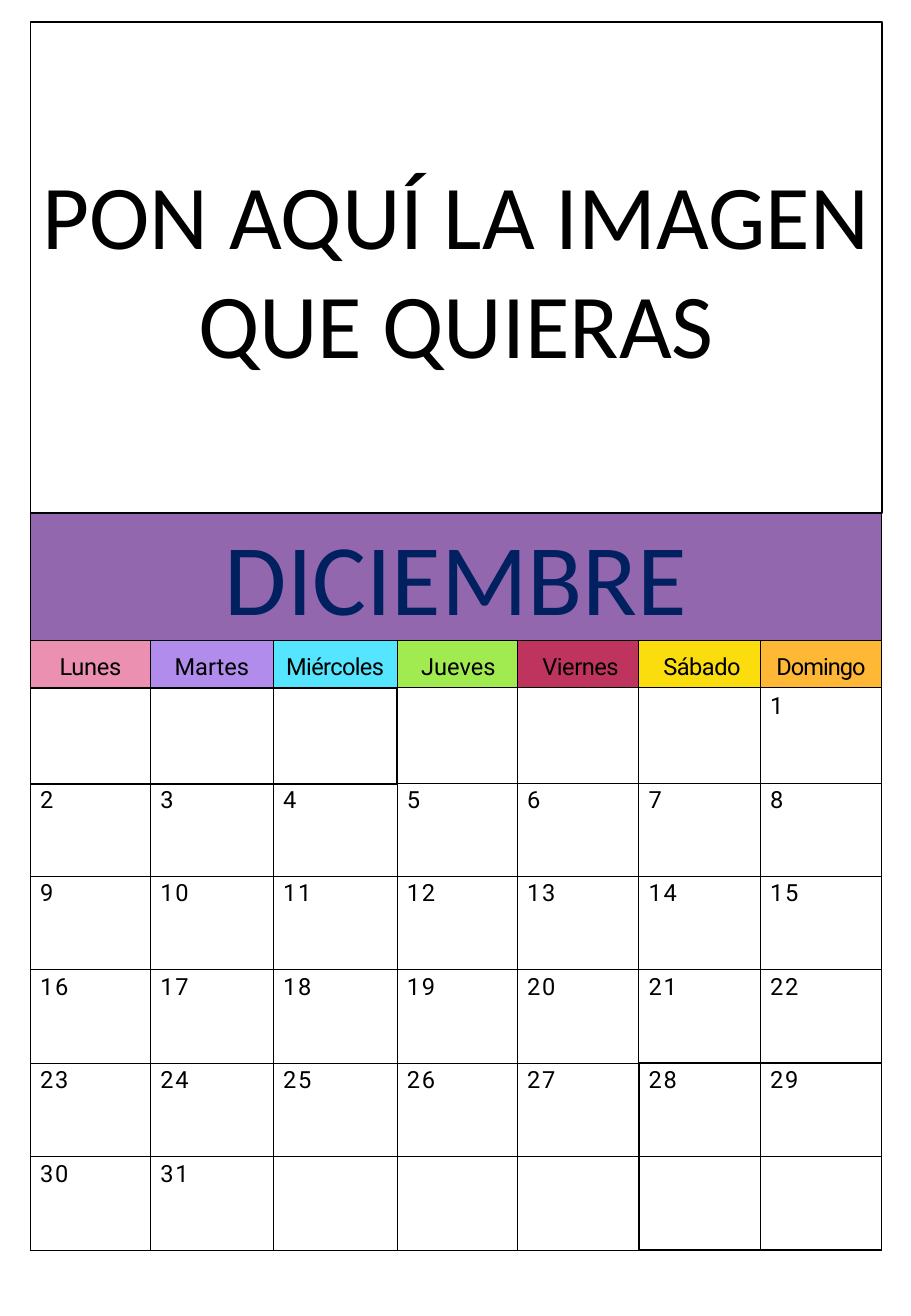
from dataclasses import dataclass

from lxml import etree
from pptx import Presentation
from pptx.dml.color import RGBColor
from pptx.enum.shapes import MSO_SHAPE
from pptx.enum.text import MSO_ANCHOR, PP_ALIGN
from pptx.oxml.ns import qn
from pptx.util import Pt

RECTANGLE = MSO_SHAPE.RECTANGLE
MIDDLE, TOP = MSO_ANCHOR.MIDDLE, MSO_ANCHOR.TOP
CENTER, LEFT = PP_ALIGN.CENTER, PP_ALIGN.LEFT

BLACK = RGBColor(0x00, 0x00, 0x00)
WHITE = RGBColor(0xFF, 0xFF, 0xFF)
NAVY = RGBColor(0x00, 0x20, 0x60)
PURPLE = RGBColor(0x93, 0x67, 0xAD)
PINK = RGBColor(0xEB, 0x90, 0xB0)
LILAC = RGBColor(0xB1, 0x8C, 0xEC)
CYAN = RGBColor(0x55, 0xE5, 0xFF)
GREEN = RGBColor(0xA1, 0xEB, 0x51)
CRIMSON = RGBColor(0xBE, 0x34, 0x5E)
YELLOW = RGBColor(0xFB, 0xDD, 0x0D)
ORANGE = RGBColor(0xFF, 0xB8, 0x36)

# Page layout in points
PAGE_WIDTH, PAGE_HEIGHT = 540, 779.76
PAGE_LEFT, CONTENT_WIDTH = 18, 504.7
PHOTO_TOP, PHOTO_HEIGHT = 13, 290.9
MONTH_TOP, MONTH_HEIGHT = 303.9, 75.6
CALENDAR_TOP = 379.5
WEEK_HEIGHTS = [56.9, 54.7, 55.4, 55.4, 55.4, 55.4]
WEEK_INSETS = [2.9, 1.4, 2.2, 2.2, 2.2, 2.2]
HEADER_HEIGHT = 28.1
THIN, THICK = 0.75, 1

# Calendar facts
FIRST_WEEKDAY, DAYS_IN_MONTH = 6, 31
THICK_CELLS = {(1, col) for col in range(3)} | {
    (row, col) for row in (5, 6) for col in (5, 6)
}
SIDES = {"lnL": (0, -1), "lnR": (0, 1), "lnT": (-1, 0), "lnB": (1, 0)}


@dataclass
class Weekday:
    name: str
    fill: RGBColor
    width: float
    tracking: float = 0
    indent: float = 0


WEEKDAYS = [
    Weekday("Lunes", PINK, 71.3, tracking=-0.2),
    Weekday("Martes", LILAC, 72.7),
    Weekday("Miércoles", CYAN, 73.4, tracking=-0.4),
    Weekday("Jueves", GREEN, 71.3, indent=1.4),
    Weekday("Viernes", CRIMSON, 72, tracking=-0.3, indent=2.9),
    Weekday("Sábado", YELLOW, 72, tracking=-0.3, indent=2.9),
    Weekday("Domingo", ORANGE, 72, tracking=-0.6),
]


def write_text(frame, text: str, *, size: float, font: str = "Roboto",
               color: RGBColor = BLACK, align=CENTER, before: float = 0,
               indent: float = 0, tracking: float = 0) -> None:
    paragraph = frame.paragraphs[0]
    paragraph.alignment = align
    paragraph.space_before = Pt(before)
    if indent:
        paragraph._p.get_or_add_pPr().set("marL", str(Pt(indent)))
    run = paragraph.add_run()
    run.text = text
    run.font.size = Pt(size)
    run.font.name = font
    run.font.color.rgb = color
    if tracking:
        run._r.get_or_add_rPr().set("spc", str(round(tracking * 100)))


def style_cell(cell, fill: RGBColor, borders: dict[str, float],
               inset: float = 3.6, anchor=MIDDLE) -> None:
    cell.margin_left = cell.margin_right = cell.margin_bottom = Pt(0)
    cell.margin_top = Pt(inset)
    cell.vertical_anchor = anchor
    properties = cell._tc.get_or_add_tcPr()
    for side, width in borders.items():
        border = etree.SubElement(properties, qn(f"a:{side}"), w=str(Pt(width)))
        solid = etree.SubElement(border, qn("a:solidFill"))
        etree.SubElement(solid, qn("a:srgbClr"), val=str(BLACK))
    cell.fill.solid()
    cell.fill.fore_color.rgb = fill


def add_grid(slide, top: float, widths: list[float], heights: list[float]):
    frame = slide.shapes.add_table(
        len(heights), len(widths), Pt(PAGE_LEFT), Pt(top),
        Pt(sum(widths)), Pt(sum(heights)))
    grid = frame.table
    grid.first_row = grid.horz_banding = False
    for column, width in zip(grid.columns, widths):
        column.width = Pt(width)
    for row, height in zip(grid.rows, heights):
        row.height = Pt(height)
    return grid


def calendar_borders(row: int, col: int) -> dict[str, float]:
    """A side is thick when either cell that shares it is thick."""
    return {
        side: THICK if {(row, col), (row + down, col + right)} & THICK_CELLS else THIN
        for side, (down, right) in SIDES.items()
    }


def add_month(slide) -> None:
    month = add_grid(slide, MONTH_TOP, [CONTENT_WIDTH], [MONTH_HEIGHT]).cell(0, 0)
    style_cell(month, PURPLE, dict.fromkeys(SIDES, THIN) | {"lnB": THICK})
    write_text(month.text_frame, "DICIEMBRE", size=60, font="Calibri",
               color=NAVY, before=4.2)


def add_calendar(slide) -> None:
    calendar = add_grid(slide, CALENDAR_TOP, [day.width for day in WEEKDAYS],
                        [HEADER_HEIGHT, *WEEK_HEIGHTS])
    for col, weekday in enumerate(WEEKDAYS):
        # Weekday heading
        heading = calendar.cell(0, col)
        style_cell(heading, weekday.fill, calendar_borders(0, col))
        write_text(heading.text_frame, weekday.name, size=14, before=4.2,
                   indent=weekday.indent, tracking=weekday.tracking)

        # Dates below it
        for week, inset in enumerate(WEEK_INSETS):
            date_cell = calendar.cell(week + 1, col)
            style_cell(date_cell, WHITE, calendar_borders(week + 1, col), inset, TOP)
            date = week * len(WEEKDAYS) + col - FIRST_WEEKDAY + 1
            if 1 <= date <= DAYS_IN_MONTH:
                write_text(date_cell.text_frame, str(date), size=14, align=LEFT,
                           before=4.8, indent=5.8, tracking=1)


def add_photo_area(slide) -> None:
    photo_area = slide.shapes.add_shape(
        RECTANGLE, Pt(PAGE_LEFT), Pt(PHOTO_TOP), Pt(CONTENT_WIDTH), Pt(PHOTO_HEIGHT))
    photo_area.shadow.inherit = False
    photo_area.fill.solid()
    photo_area.fill.fore_color.rgb = WHITE
    photo_area.line.color.rgb = BLACK
    photo_area.line.width = Pt(THICK)
    photo_area.text_frame.word_wrap = True
    photo_area.text_frame.vertical_anchor = MIDDLE
    write_text(photo_area.text_frame, "PON AQUÍ LA IMAGEN QUE QUIERAS",
               size=54, font="Calibri")


def main() -> None:
    presentation = Presentation()
    presentation.slide_width = Pt(PAGE_WIDTH)
    presentation.slide_height = Pt(PAGE_HEIGHT)
    slide = presentation.slides.add_slide(presentation.slide_layouts[6])
    add_month(slide)
    add_calendar(slide)
    add_photo_area(slide)
    presentation.save("out.pptx")


if __name__ == "__main__":
    main()
